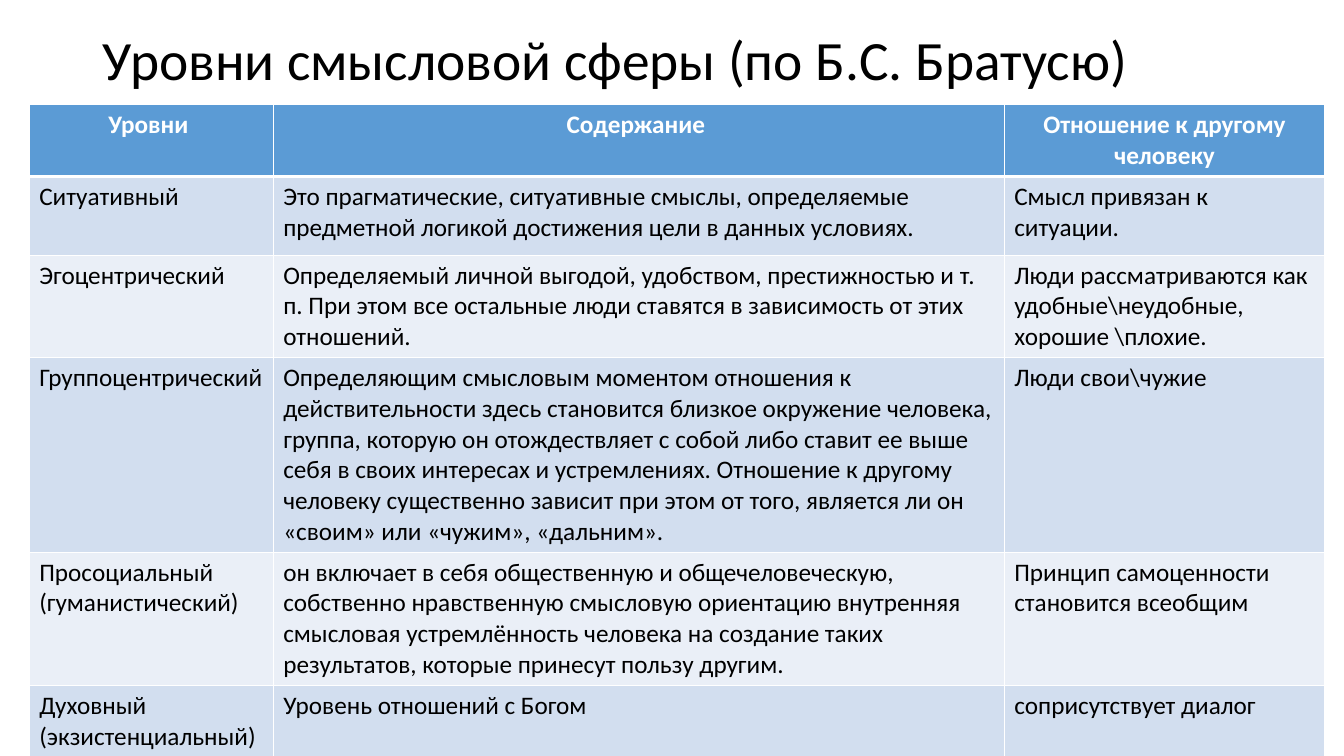
import lxml.etree
import pptx
import pptx.dml.color
import pptx.enum.text
import pptx.oxml.ns
import pptx.util

PX = 9144
WHITE = "FFFFFF"
BLACK = "000000"
HEADER_FILL = "5B9BD5"
BAND_FILLS = ("D2DEEF", "EAEFF7")
TITLE_BOX = (92, 40, 1150, 45)
TABLE_BOX = (29, 104, 1285, 638)
COLUMN_WIDTHS = (242, 725, 318)
ROW_HEIGHTS = (41, 78, 41, 41, 41, 41)
TITLE = "Уровни смысловой сферы (по Б.С. Братусю)"
LEVELS = (
    ("Уровни ", "Содержание ", "Отношение к другому человеку"),
    (
        "Ситуативный",
        "Это прагматические, ситуативные смыслы, определяемые предметной "
        "логикой достижения цели в данных условиях.",
        "Смысл привязан к ситуации.",
    ),
    (
        "Эгоцентрический",
        "Определяемый личной выгодой, удобством, престижностью и т. п. "
        "При этом все остальные люди ставятся в зависимость от этих отношений.",
        "Люди рассматриваются как удобные\\неудобные, хорошие \\плохие.",
    ),
    (
        "Группоцентрический",
        "Определяющим смысловым моментом отношения к действительности здесь "
        "становится близкое окружение человека, группа, которую он отождествляет "
        "с собой либо ставит ее выше себя в своих интересах и устремлениях. "
        "Отношение к другому человеку существенно зависит при этом от того, "
        "является ли он «своим» или «чужим», «дальним».",
        "Люди свои\\чужие",
    ),
    (
        "Просоциальный (гуманистический)",
        "он включает в себя общественную и общечеловеческую, собственно "
        "нравственную смысловую ориентацию внутренняя смысловая устремлённость "
        "человека на создание таких результатов, которые принесут пользу другим.",
        "Принцип самоценности становится всеобщим",
    ),
    (
        "Духовный (экзистенциальный)",
        "Уровень отношений с Богом",
        "соприсутствует диалог",
    ),
)


def px(length):
    """Turn whole pixels into EMU."""
    return pptx.util.Emu(length * PX)


def color(value):
    """Turn a hex string into a colour."""
    return pptx.dml.color.RGBColor.from_string(value)


def set_attributes(target, values):
    """Set every attribute named in a dict of format values."""
    for name, value in values.items():
        setattr(target, name, value)


def write_text(text_frame, text, alignment, size, text_color, bold=False):
    """Write one formatted paragraph."""
    paragraph = text_frame.paragraphs[0]
    paragraph.alignment = alignment
    run = paragraph.add_run()
    run.text = text
    font_format = {"name": "Calibri", "size": pptx.util.Pt(size), "bold": bold}
    set_attributes(run.font, font_format)
    run.font.color.rgb = color(text_color)
    return paragraph


def add_border(cell, side, width):
    """Draw one white cell border of the given width in points."""
    qn = pptx.oxml.ns.qn
    properties = cell._tc.get_or_add_tcPr()
    line = lxml.etree.SubElement(properties, qn(f"a:ln{side}"), w=str(pptx.util.Pt(width)))
    fill = lxml.etree.SubElement(line, qn("a:solidFill"))
    lxml.etree.SubElement(fill, qn("a:srgbClr"), val=WHITE)


def place_title(slide, box):
    """Place the title placeholder in its box."""
    title = slide.shapes.title
    set_attributes(title, dict(zip(("left", "top", "width", "height"), map(px, box))))
    frame_format = {
        "word_wrap": True,
        "auto_size": pptx.enum.text.MSO_AUTO_SIZE.NONE,
        "vertical_anchor": pptx.enum.text.MSO_ANCHOR.MIDDLE,
    }
    set_attributes(title.text_frame, frame_format)
    left = pptx.enum.text.PP_ALIGN.LEFT
    write_text(title.text_frame, TITLE, left, 39.6, BLACK).line_spacing = 0.9


def format_cell(cell, row_index, text):
    """Give a cell its borders, band fill and text."""
    is_header = row_index == 0
    widths = {"L": 1, "R": 1, "T": 3 if row_index == 1 else 1, "B": 3 if is_header else 1}
    for side, width in widths.items():
        add_border(cell, side, width)
    cell.fill.solid()
    cell.fill.fore_color.rgb = color(HEADER_FILL if is_header else BAND_FILLS[(row_index - 1) % 2])
    align = pptx.enum.text.PP_ALIGN
    alignment = align.CENTER if is_header else align.LEFT
    write_text(cell.text_frame, text, alignment, 18, WHITE if is_header else BLACK, is_header)


def place_levels_table(slide, box):
    """Place the table of levels in its box."""
    frame = slide.shapes.add_table(len(LEVELS), len(COLUMN_WIDTHS), *map(px, box))
    table = frame.table
    for column, width in zip(table.columns, COLUMN_WIDTHS):
        column.width = px(width)
    for row_index, (row, height) in enumerate(zip(table.rows, ROW_HEIGHTS)):
        row.height = px(height)
        for cell, text in zip(row.cells, LEVELS[row_index]):
            format_cell(cell, row_index, text)
    frame.height = px(box[3])


def main():
    """Build and save the presentation."""
    presentation = pptx.Presentation()
    set_attributes(presentation, {"slide_width": px(1333), "slide_height": px(750)})
    slide = presentation.slides.add_slide(presentation.slide_layouts[5])
    slide.background.fill.solid()
    slide.background.fill.fore_color.rgb = color(WHITE)
    place_title(slide, TITLE_BOX)
    place_levels_table(slide, TABLE_BOX)
    presentation.save("out.pptx")


if __name__ == "__main__":
    main()
